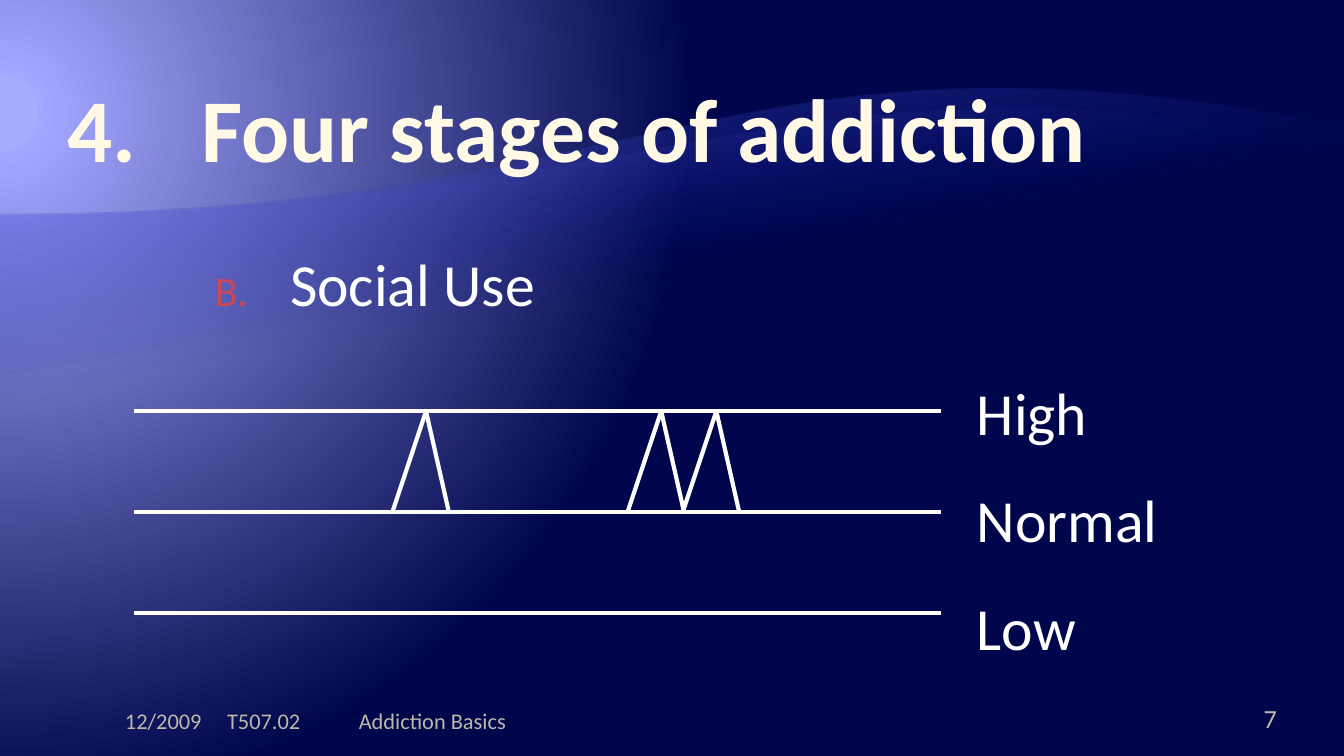
from pptx import Presentation
from pptx.dml.color import RGBColor
from pptx.enum.text import MSO_ANCHOR as Anchor, PP_ALIGN as Align
from pptx.oxml import parse_xml
from pptx.oxml.ns import nsdecls, qn
from pptx.oxml.xmlchemy import OxmlElement
from pptx.util import Inches, Pt

FONT = "Calibri"
WHITE = RGBColor(0xFF, 0xFF, 0xFF)
CREAM = RGBColor(0xFF, 0xF9, 0xE5)
FOOTER_GRAY = RGBColor(0xBD, 0xB8, 0xA9)
BULLET_RED = RGBColor(0xCC, 0x47, 0x57)
NAVY = RGBColor(0x00, 0x06, 0x4B)
PALE_GLOW = RGBColor(0xA8, 0xAC, 0xFF)
GLOW = RGBColor(0xA3, 0xA7, 0xFF)
WAVE_DEEP = RGBColor(0x00, 0x0D, 0x9E)
WAVE_LIGHT = RGBColor(0x79, 0x7F, 0xFF)

SLIDE_WIDTH = 10
SLIDE_HEIGHT = SLIDE_WIDTH * 9 / 16
HIGH, NORMAL, LOW = 3.06, 3.81, 4.56
PEAKS = (3.17, 4.92, 5.33)
RISE, FALL = 0.25, 0.17
CURVE_STEPS = 60

CIRCLE = '<a:path path="circle"><a:fillToRect l="20000" t="30000" r="135000" b="100000"/></a:path>'
UPWARD = '<a:lin ang="15600000" scaled="0"/>'


def set_gradient(fill, element, stops, direction):
    """Give a fill gradient stops of (position, colour, opacity) in percent."""
    fill.gradient()
    stop_xml = "".join(
        f'<a:gs pos="{position * 1000}"><a:srgbClr val="{color}">'
        f'<a:alpha val="{opacity * 1000}"/></a:srgbClr></a:gs>'
        for position, color, opacity in stops
    )
    gradient = parse_xml(
        f'<a:gradFill {nsdecls("a")} rotWithShape="1">'
        f"<a:gsLst>{stop_xml}</a:gsLst>{direction}</a:gradFill>"
    )
    old = element.find(".//" + qn("a:gradFill"))
    old.getparent().replace(old, gradient)


def bezier(points, t):
    """Return the point at t on a cubic curve."""
    weights = ((1 - t) ** 3, 3 * t * (1 - t) ** 2, 3 * t**2 * (1 - t), t**3)
    return tuple(
        Inches(sum(weight * point[axis] for weight, point in zip(weights, points)))
        for axis in (0, 1)
    )


def add_wave(slide, curve, bottom, light, opacity):
    """Add a translucent band that hangs below a curve."""
    top_edge = [bezier(curve, step / CURVE_STEPS) for step in range(CURVE_STEPS + 1)]
    builder = slide.shapes.build_freeform(Inches(0), Inches(bottom), scale=1.0)
    builder.add_line_segments(top_edge + [(Inches(SLIDE_WIDTH), Inches(bottom))], close=True)
    shape = builder.convert_to_shape()
    shape.shadow.inherit = False
    shape.line.fill.background()
    stops = [(65, WAVE_DEEP, 0), (100, light, opacity)]
    set_gradient(shape.fill, shape._element, stops, UPWARD)


def add_text(slide, text, left, top, width, height, size=32, color=WHITE, bold=False,
             align=Align.LEFT, anchor=Anchor.TOP, spacing=None, insets=(0.1, 0.05, 0.1, 0.05)):
    """Add a text box with one paragraph per line and return its text frame."""
    box = slide.shapes.add_textbox(Inches(left), Inches(top), Inches(width), Inches(height))
    frame = box.text_frame
    frame.word_wrap = True
    frame.vertical_anchor = anchor
    (frame.margin_left, frame.margin_top,
     frame.margin_right, frame.margin_bottom) = map(Inches, insets)
    frame.text = text
    for paragraph in frame.paragraphs:
        paragraph.alignment = align
        paragraph.line_spacing = spacing
        font = paragraph.runs[0].font
        font.name, font.size, font.bold = FONT, Pt(size), bold
        font.color.rgb = color
    return frame


def add_letter_bullet(paragraph, start, indent):
    """Number a paragraph with a smaller coloured capital letter."""
    properties = paragraph._p.get_or_add_pPr()
    properties.set("marL", str(Inches(indent)))
    properties.set("indent", str(-Inches(indent)))
    for xml in (
        f'<a:buClr {nsdecls("a")}><a:srgbClr val="{BULLET_RED}"/></a:buClr>',
        f'<a:buSzPct {nsdecls("a")} val="70000"/>',
        f'<a:buAutoNum {nsdecls("a")} type="alphaUcPeriod" startAt="{start}"/>',
    ):
        properties.append(parse_xml(xml))


def add_tab_stop(paragraph, position):
    """Set one left tab stop on a paragraph."""
    paragraph._p.get_or_add_pPr().append(parse_xml(
        f'<a:tabLst {nsdecls("a")}><a:tab pos="{Inches(position)}" algn="l"/></a:tabLst>'
    ))


def add_line(slide, start, end):
    """Add a white line between two points."""
    line = slide.shapes.add_connector(1, *map(Inches, start + end))
    line.line.color.rgb = WHITE
    line.line.width = Pt(2.25)
    line._element.spPr.append(OxmlElement("a:effectLst"))


def add_mood_lines(slide):
    """Draw the three mood levels and the spikes of social use."""
    for level in (HIGH, NORMAL, LOW):
        add_line(slide, (1, level), (7, level))
    for peak in PEAKS:
        add_line(slide, (peak - RISE, NORMAL), (peak, HIGH))
        add_line(slide, (peak + FALL, NORMAL), (peak, HIGH))


def add_footer(slide):
    """Add the date, course number, course name and slide number."""
    style = dict(color=FOOTER_GRAY, anchor=Anchor.BOTTOM)
    date = add_text(slide, "12/2009\tT507.02", 0.5, 5.21, 2.17, 0.3, size=12,
                    insets=(0.43, 0.05, 0.1, 0.05), **style)
    add_tab_stop(date.paragraphs[0], 0.76)
    add_text(slide, "7", 8.92, 5.21, 0.58, 0.3, size=14, align=Align.RIGHT,
             insets=(0.1, 0.05, 0, 0.05), **style)
    add_text(slide, "Addiction Basics", 2.67, 5.21, 3.17, 0.3, size=12,
             insets=(0, 0.05, 0.1, 0.05), **style)


def main():
    """Build and save the slide."""
    presentation = Presentation()
    presentation.slide_width = Inches(SLIDE_WIDTH)
    presentation.slide_height = Inches(SLIDE_HEIGHT)
    slide = presentation.slides.add_slide(presentation.slide_layouts[6])
    stops = [(5, PALE_GLOW, 100), (5, GLOW, 100), (90, NAVY, 100)]
    set_gradient(slide.background.fill, slide._element, stops, CIRCLE)
    add_wave(slide, [(0, 1.6), (5, 1.6), (5.34, 0.04), (10, 0.94)], 5.5, WAVE_LIGHT, 55)
    add_wave(slide, [(0, 1.6), (5, 1.6), (5.98, 0.23), (10, 1.1)], 4.77, GLOW, 30)
    add_text(slide, "4.\tFour stages of addiction", 0.5, 0.31, 9, 1.04, size=48, color=CREAM,
             bold=True, anchor=Anchor.BOTTOM, insets=(0, 0.01, 0, 0.01))
    stage = add_text(slide, "Social Use", 1.5, 1.79, 8.5, 0.94)
    add_letter_bullet(stage.paragraphs[0], start=2, indent=0.56)
    add_mood_lines(slide)
    add_text(slide, "High\nNormal\nLow", 7.17, 2.48, 2.33, 2.44, spacing=1.5)
    add_footer(slide)
    presentation.save("out.pptx")


if __name__ == "__main__":
    main()
